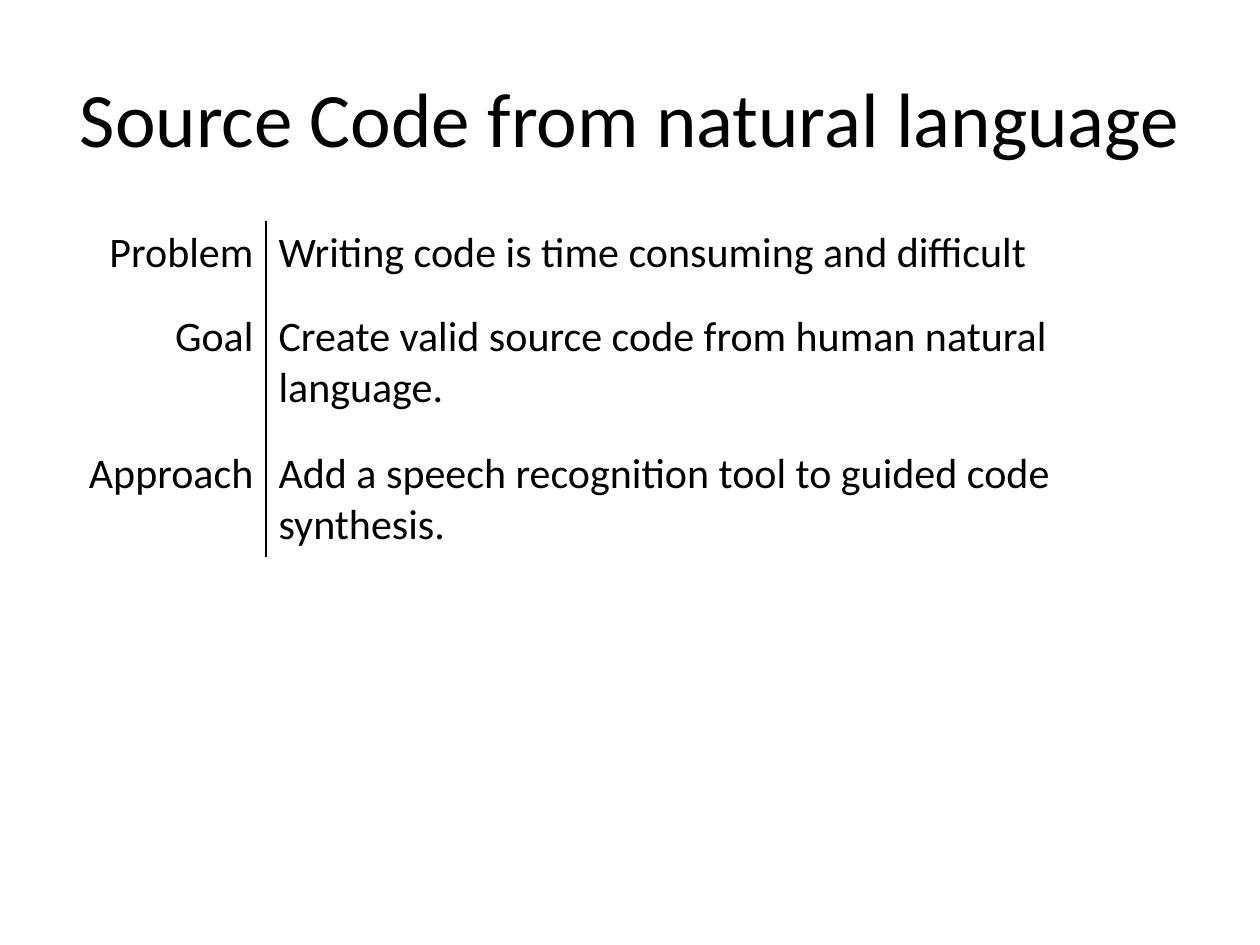
from typing import NamedTuple

from lxml.etree import SubElement
from pptx import Presentation
from pptx.dml.color import RGBColor
from pptx.enum.text import MSO_ANCHOR, PP_ALIGN
from pptx.oxml.ns import qn
from pptx.slide import Slide
from pptx.table import _Cell
from pptx.text.text import TextFrame
from pptx.util import Emu, Pt

EMU_PER_PX = 914400 // 126
FONT = "Calibri"
BLACK = RGBColor(0x00, 0x00, 0x00)
MARGIN = 63
CONTENT_WIDTH = 1134
LABEL_WIDTH = 203
RULE_WIDTH = Pt(1)


class Topic(NamedTuple):
    label: str
    statement: str
    height: int


TOPICS = [
    Topic("Problem", "Writing code is time consuming and difficult", 84),
    Topic("Goal", "Create valid source code from human natural language.", 137),
    Topic("Approach", "Add a speech recognition tool to guided code synthesis.", 115),
]


def px(length: int) -> Emu:
    return Emu(length * EMU_PER_PX)


def write(frame: TextFrame, text: str, size: int, align: PP_ALIGN) -> None:
    paragraph = frame.paragraphs[0]
    paragraph.alignment = align
    run = paragraph.add_run()
    run.text = text
    run.font.name = FONT
    run.font.size = Pt(size)
    run.font.color.rgb = BLACK


def rule_one_side(cell: _Cell, ruled_side: str) -> None:
    """Leave the cell unfilled, with a border on one side only."""
    properties = cell._tc.get_or_add_tcPr()
    for side in ("lnL", "lnR", "lnT", "lnB"):
        border = SubElement(properties, qn(f"a:{side}"), w=str(RULE_WIDTH))
        if side == ruled_side:
            fill = SubElement(border, qn("a:solidFill"))
            SubElement(fill, qn("a:srgbClr"), val=str(BLACK))
        else:
            SubElement(border, qn("a:noFill"))
    cell.fill.background()


def add_title(slide: Slide, text: str) -> None:
    title = slide.shapes.add_textbox(px(MARGIN), px(38), px(CONTENT_WIDTH), px(158))
    frame = title.text_frame
    frame.word_wrap = True
    frame.vertical_anchor = MSO_ANCHOR.MIDDLE
    write(frame, text, 44, PP_ALIGN.CENTER)


def add_topics(slide: Slide, topics: list[Topic]) -> None:
    height = sum(topic.height for topic in topics)
    table = slide.shapes.add_table(
        len(topics), 2, px(MARGIN), px(221), px(CONTENT_WIDTH), px(height)
    ).table
    table.first_row = False
    table.horz_banding = False
    table.columns[0].width = px(LABEL_WIDTH)
    table.columns[1].width = px(CONTENT_WIDTH - LABEL_WIDTH)
    for row, topic in zip(table.rows, topics):
        row.height = px(topic.height)
        label, statement = row.cells
        write(label.text_frame, topic.label, 24, PP_ALIGN.RIGHT)
        write(statement.text_frame, topic.statement, 24, PP_ALIGN.LEFT)
        rule_one_side(label, "lnR")
        rule_one_side(statement, "lnL")


def main() -> None:
    presentation = Presentation()
    presentation.slide_width = px(1260)
    presentation.slide_height = px(945)
    slide = presentation.slides.add_slide(presentation.slide_layouts[6])
    add_title(slide, "Source Code from natural language")
    add_topics(slide, TOPICS)
    presentation.save("out.pptx")


if __name__ == "__main__":
    main()
